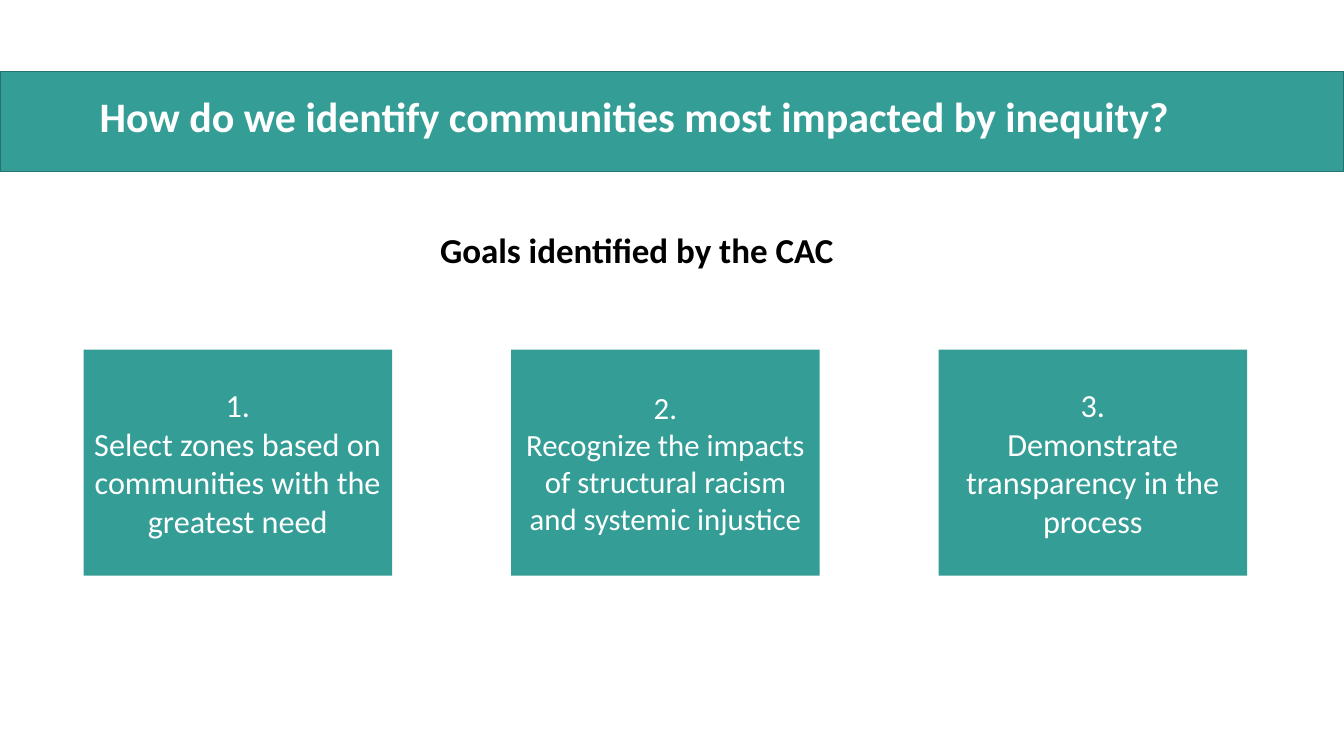
from pptx import Presentation
from pptx.dml.color import RGBColor
from pptx.enum.shapes import MSO_SHAPE as Preset
from pptx.enum.text import MSO_ANCHOR as Anchor, PP_ALIGN as Align
from pptx.util import Inches, Pt

TEAL = RGBColor(0x34, 0x9D, 0x96)
DARK_TEAL = RGBColor(0x26, 0x74, 0x6F)
WHITE = RGBColor(0xFF, 0xFF, 0xFF)
BLACK = RGBColor(0x00, 0x00, 0x00)


class SlideBuilder:
    font_name = "Calibri"

    def __init__(self, page):
        self.page = page

    def add_lines(self, frame, lines, size, color, bold=False, align=Align.LEFT):
        frame.word_wrap = True
        text_format = {"name": self.font_name, "size": Pt(size), "bold": bold}
        for index, line in enumerate(lines):
            para = frame.paragraphs[0] if index == 0 else frame.add_paragraph()
            para.alignment = align
            span = para.add_run()
            span.text = line
            for key, value in text_format.items():
                setattr(span.font, key, value)
            span.font.color.rgb = color

    def rectangle(self, left, top, width, height, outline=None):
        box = self.page.shapes.add_shape(
            Preset.RECTANGLE, *map(Inches, (left, top, width, height)))
        box.shadow.inherit = False
        box.fill.solid()
        box.fill.fore_color.rgb = TEAL
        if outline is None:
            box.line.fill.background()
        else:
            box.line.color.rgb = outline
            box.line.width = Pt(1)
        return box

    def label(self, left, top, width, height, text, **style):
        box = self.page.shapes.add_textbox(
            *map(Inches, (left, top, width, height)))
        self.add_lines(box.text_frame, [text], bold=True, **style)

    def goal_card(self, left, top, width, height, lines, size):
        box = self.rectangle(left, top, width, height)
        box.text_frame.vertical_anchor = Anchor.MIDDLE
        self.add_lines(box.text_frame, lines, size, WHITE, align=Align.CENTER)


def main():
    deck = Presentation()
    deck.slide_width, deck.slide_height = Inches(13.33), Inches(7.5)
    builder = SlideBuilder(deck.slides.add_slide(deck.slide_layouts[6]))

    # Title band
    builder.rectangle(0, 0.71, 13.33, 0.99, outline=DARK_TEAL)
    builder.label(0.89, 0.85, 11.88, 0.61,
                  "How do we identify communities most impacted by inequity?",
                  size=30, color=WHITE)

    # Subtitle
    builder.label(2.36, 2.22, 7.91, 2.04, "Goals identified by the CAC",
                  size=25, color=BLACK, align=Align.CENTER)

    # Goal cards, evenly spaced
    goals = [
        ("Select zones based on communities with the greatest need", 23),
        ("Recognize the impacts of structural racism and systemic injustice", 22),
        ("Demonstrate transparency in the process", 23),
    ]
    for index, (goal, size) in enumerate(goals):
        builder.goal_card(0.83 + index * 4.24, 3.47, 3.06, 2.24,
                          [f"{index + 1}.", goal], size)

    deck.save("out.pptx")


if __name__ == "__main__":
    main()
